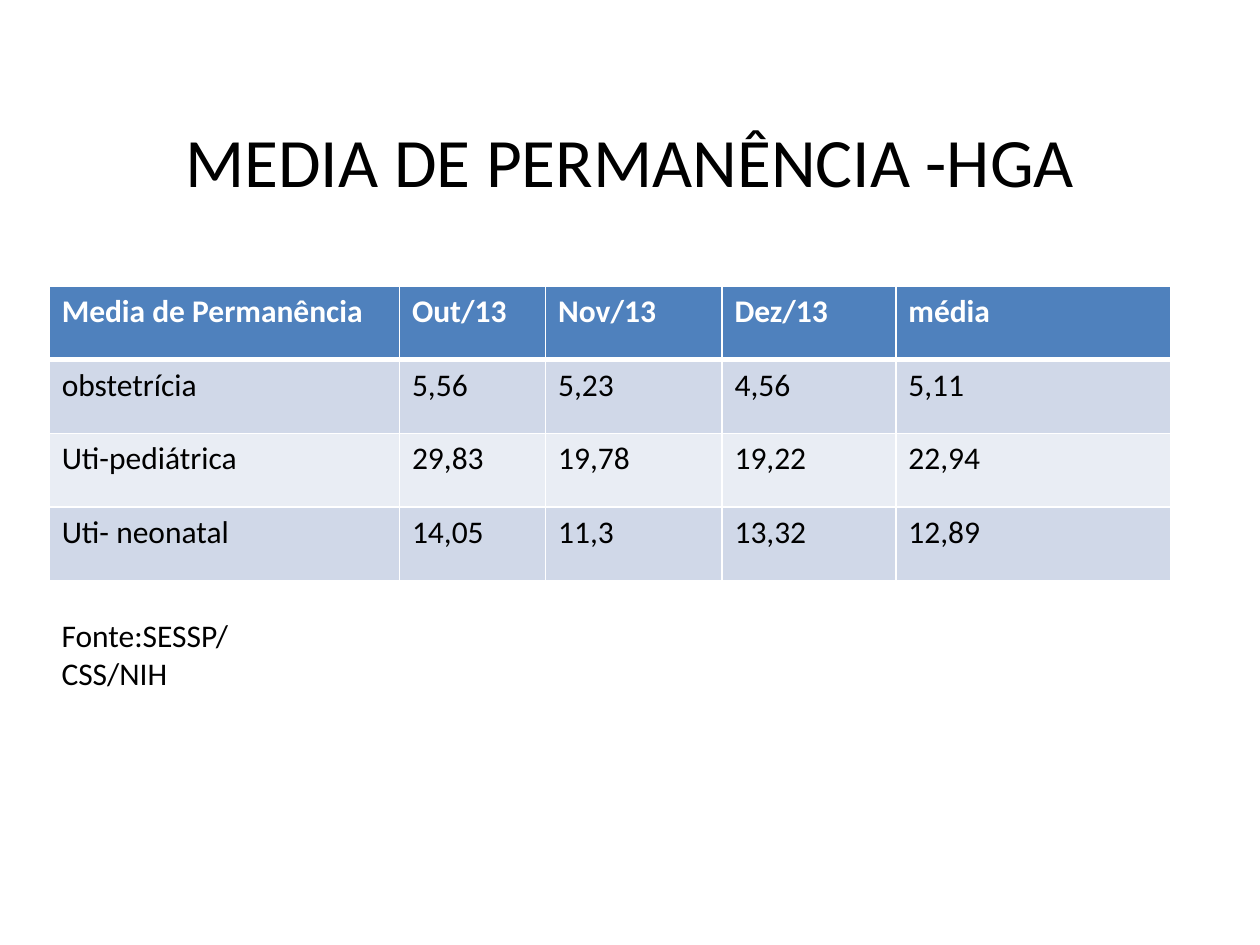
from lxml import etree
from pptx import Presentation
from pptx.dml.color import RGBColor
from pptx.enum.text import MSO_ANCHOR, PP_ALIGN
from pptx.oxml.ns import qn
from pptx.util import Inches, Pt

BOTTOM, TOP = MSO_ANCHOR.BOTTOM, MSO_ANCHOR.TOP
CENTER, LEFT = PP_ALIGN.CENTER, PP_ALIGN.LEFT

BLACK = RGBColor(0x00, 0x00, 0x00)
WHITE = RGBColor(0xFF, 0xFF, 0xFF)
HEADER_BLUE = RGBColor(0x4F, 0x81, 0xBD)
BAND_DARK = RGBColor(0xD0, 0xD8, 0xE8)
BAND_LIGHT = RGBColor(0xE9, 0xED, 0xF4)

FONT = "Calibri"
MARGIN_LEFT = 0.39
COLUMN_WIDTHS = (2.78, 1.16, 1.4, 1.38, 2.18)
ROW_HEIGHT = 0.585
STAY_ROWS = (
    ("Media de Permanência", "Out/13", "Nov/13", "Dez/13", "média"),
    ("obstetrícia", "5,56", "5,23", "4,56", "5,11"),
    ("Uti-pediátrica", "29,83", "19,78", "19,22", "22,94"),
    ("Uti- neonatal", "14,05", "11,3", "13,32", "12,89"),
)


def write_paragraph(paragraph, text, size=18, color=BLACK, bold=False, align=LEFT):
    paragraph.alignment = align
    run = paragraph.add_run()
    run.text = text
    formats = {"name": FONT, "size": Pt(size), "bold": bold}
    for name, value in formats.items():
        setattr(run.font, name, value)
    run.font.color.rgb = color


def add_text(slide, box, lines, anchor=TOP, bottom_margin=0.05, **formats):
    frame = slide.shapes.add_textbox(*map(Inches, box)).text_frame
    frame.word_wrap = True
    frame.vertical_anchor = anchor
    frame.margin_bottom = Inches(bottom_margin)
    for index, line in enumerate(lines):
        paragraph = frame.add_paragraph() if index else frame.paragraphs[0]
        write_paragraph(paragraph, line, **formats)


def set_borders(cell, widths):
    """Draw white borders; widths maps each side's tag to its points."""
    properties = cell._tc.get_or_add_tcPr()
    for position, (side, width) in enumerate(widths.items()):
        line = etree.Element(qn(f"a:{side}"), w=str(Pt(width)))
        fill = etree.SubElement(line, qn("a:solidFill"))
        etree.SubElement(fill, qn("a:srgbClr"), val=str(WHITE))
        properties.insert(position, line)


def add_stay_table(slide, left, top):
    shape = slide.shapes.add_table(
        len(STAY_ROWS), len(COLUMN_WIDTHS), Inches(left), Inches(top),
        Inches(sum(COLUMN_WIDTHS)), Inches(ROW_HEIGHT * len(STAY_ROWS)))
    table = shape.table
    for column, width in zip(table.columns, COLUMN_WIDTHS):
        column.width = Inches(width)
    for row_index, values in enumerate(STAY_ROWS):
        table.rows[row_index].height = Inches(ROW_HEIGHT)
        header = row_index == 0
        band = BAND_DARK if row_index % 2 else BAND_LIGHT
        widths = {"lnL": 1, "lnR": 1,
                  "lnT": 3 if row_index == 1 else 1, "lnB": 3 if header else 1}
        for column_index, value in enumerate(values):
            cell = table.cell(row_index, column_index)
            cell.fill.solid()
            cell.fill.fore_color.rgb = HEADER_BLUE if header else band
            write_paragraph(cell.text_frame.paragraphs[0], value,
                            color=WHITE if header else BLACK, bold=header)
            set_borders(cell, widths)


def main():
    presentation = Presentation()
    presentation.slide_width = Inches(10)
    presentation.slide_height = Inches(7.5)
    slide = presentation.slides.add_slide(presentation.slide_layouts[6])
    add_text(slide, (0.5, 0.3, 9, 1.3), ["MEDIA DE PERMANÊNCIA -HGA"],
             anchor=BOTTOM, bottom_margin=0, size=39.6, align=CENTER)
    add_stay_table(slide, MARGIN_LEFT, 2.27)
    add_text(slide, (MARGIN_LEFT, 4.84, 1.8, 0.71), ["Fonte:SESSP/", "CSS/NIH"])
    presentation.save("out.pptx")


if __name__ == "__main__":
    main()
